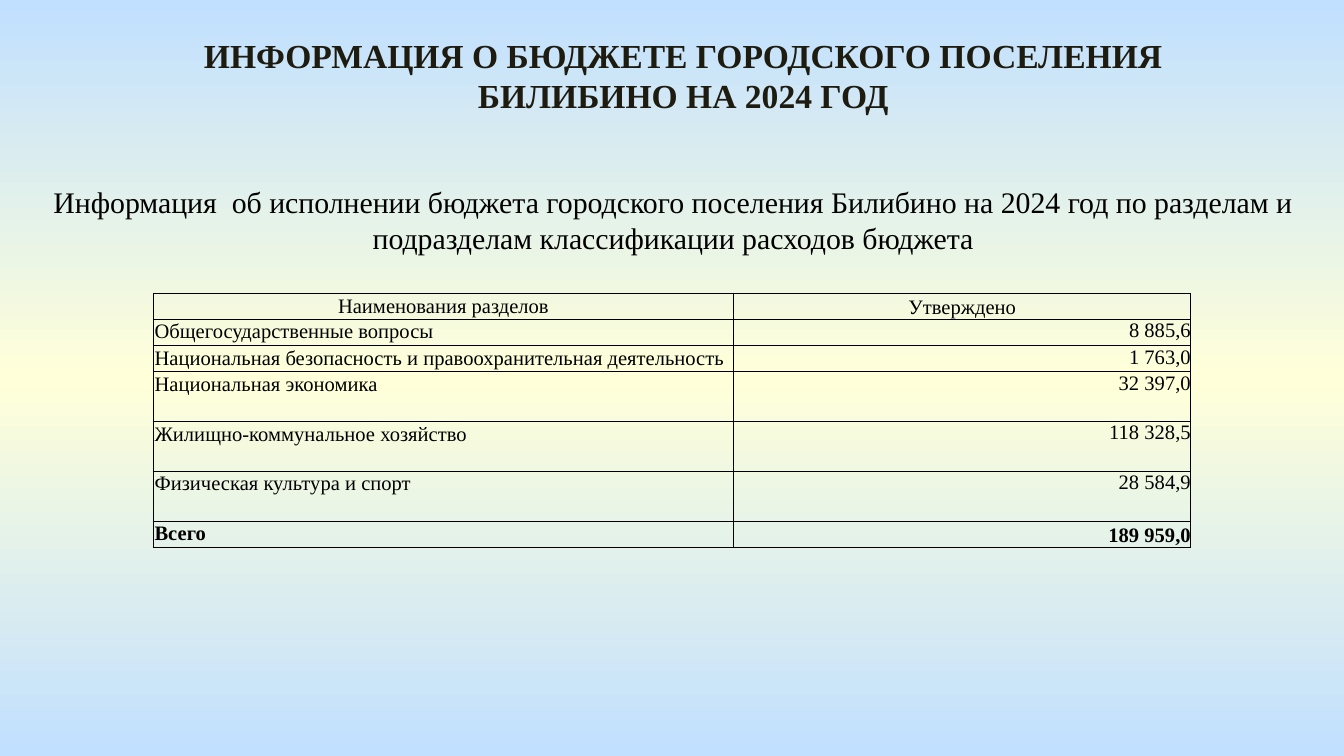
from copy import deepcopy

from lxml import etree
from pptx import Presentation
from pptx import util as u
from pptx.dml.color import RGBColor
from pptx.enum import text
from pptx.oxml.ns import qn

TITLE = "ИНФОРМАЦИЯ О БЮДЖЕТЕ ГОРОДСКОГО ПОСЕЛЕНИЯ БИЛИБИНО НА 2024 ГОД"
SUBTITLE = ("Информация  об исполнении бюджета городского поселения Билибино на 2024 год "
            "по разделам и подразделам классификации расходов бюджета")
ROWS = [
    ("Наименования разделов", "Утверждено", 0.19),
    ("Общегосударственные вопросы", "8 885,6", 0.2),
    ("Национальная безопасность и правоохранительная деятельность", "1 763,0", 0.19),
    ("Национальная экономика", "32 397,0", 0.37),
    ("Жилищно-коммунальное хозяйство", "118 328,5", 0.37),
    ("Физическая культура и спорт", "28 584,9", 0.37),
    ("Всего", "189 959,0", 0.19),
]
COLS = [4.32, 3.4]
WIDTH = 10
THEME = {
    "font": "Times New Roman",
    "title": 18, "subtitle": 16, "table": 11,
    "heading": "1E1C11", "ink": "000000",
    "background": ["C1E0FF", "FFFFD9", "C1E0FF"],
    "border": 0.5,
}
ALIGN, ANCHOR = text.PP_ALIGN, text.MSO_ANCHOR


def write(tf, content, size, color="ink", align=ALIGN.CENTER, bold=False):
    tf.word_wrap = True
    tf.text = content
    p = tf.paragraphs[0]
    p.alignment = align
    p.font.name = THEME["font"]
    p.font.size = u.Pt(THEME[size])
    p.font.bold = bold
    p.font.color.rgb = RGBColor.from_string(THEME[color])


def paint_background(s):
    fill = s.background.fill
    fill.gradient()
    fill.gradient_angle = 90
    stops = next(s.element.iter(qn("a:gsLst")))
    stops.append(deepcopy(stops[-1]))
    last = len(THEME["background"]) - 1
    for i, (stop, color) in enumerate(zip(fill.gradient_stops, THEME["background"])):
        stop.position = i / last
        stop.color.rgb = RGBColor.from_string(color)


def add_borders(cell):
    tc_pr = cell._tc.get_or_add_tcPr()
    for i, side in enumerate(("lnL", "lnR", "lnT", "lnB")):
        ln = etree.Element(qn(f"a:{side}"), w=str(u.Pt(THEME["border"])))
        fill = etree.SubElement(ln, qn("a:solidFill"))
        etree.SubElement(fill, qn("a:srgbClr"), val=THEME["ink"])
        tc_pr.insert(i, ln)


def add_budget_table(s):
    heights = [row[-1] for row in ROWS]
    frame = s.shapes.add_table(len(ROWS), len(COLS), u.Inches(1.14), u.Inches(2.18),
                               u.Inches(sum(COLS)), u.Inches(sum(heights)))
    table = frame.table
    table.first_row = table.horz_banding = False
    for column, width in zip(table.columns, COLS):
        column.width = u.Inches(width)
    for r, (name, amount, height) in enumerate(ROWS):
        table.rows[r].height = u.Inches(height)
        header, total = r == 0, r == len(ROWS) - 1
        for c, content in enumerate((name, amount)):
            cell = table.cell(r, c)
            inset = u.Inches(0.01 if header or c == 0 else 0)
            cell.margin_left = cell.margin_right = cell.margin_top = inset
            cell.margin_bottom = 0
            if c == 1 and (header or total):
                cell.vertical_anchor = ANCHOR.BOTTOM
            else:
                cell.vertical_anchor = ANCHOR.MIDDLE if header else ANCHOR.TOP
            align = ALIGN.CENTER if header else (ALIGN.LEFT, ALIGN.RIGHT)[c]
            write(cell.text_frame, content, "table", align=align, bold=total)
            cell.fill.background()
            add_borders(cell)


def main():
    prs = Presentation()
    prs.slide_width, prs.slide_height = u.Inches(WIDTH), u.Inches(WIDTH * 9 / 16)
    s = prs.slides.add_slide(prs.slide_layouts[5])
    paint_background(s)

    title = s.shapes.title
    title.left, title.top = u.Inches(1.22), u.Inches(0.21)
    title.width, title.height = u.Inches(7.73), u.Inches(0.71)
    title.text_frame.vertical_anchor = ANCHOR.TOP
    write(title.text_frame, TITLE, "title", "heading", bold=True)

    subtitle = s.shapes.add_textbox(u.Inches(0.01), u.Inches(1.32), u.Inches(10), u.Inches(0.64))
    write(subtitle.text_frame, SUBTITLE, "subtitle")

    add_budget_table(s)
    prs.save("out.pptx")


if __name__ == "__main__":
    main()
